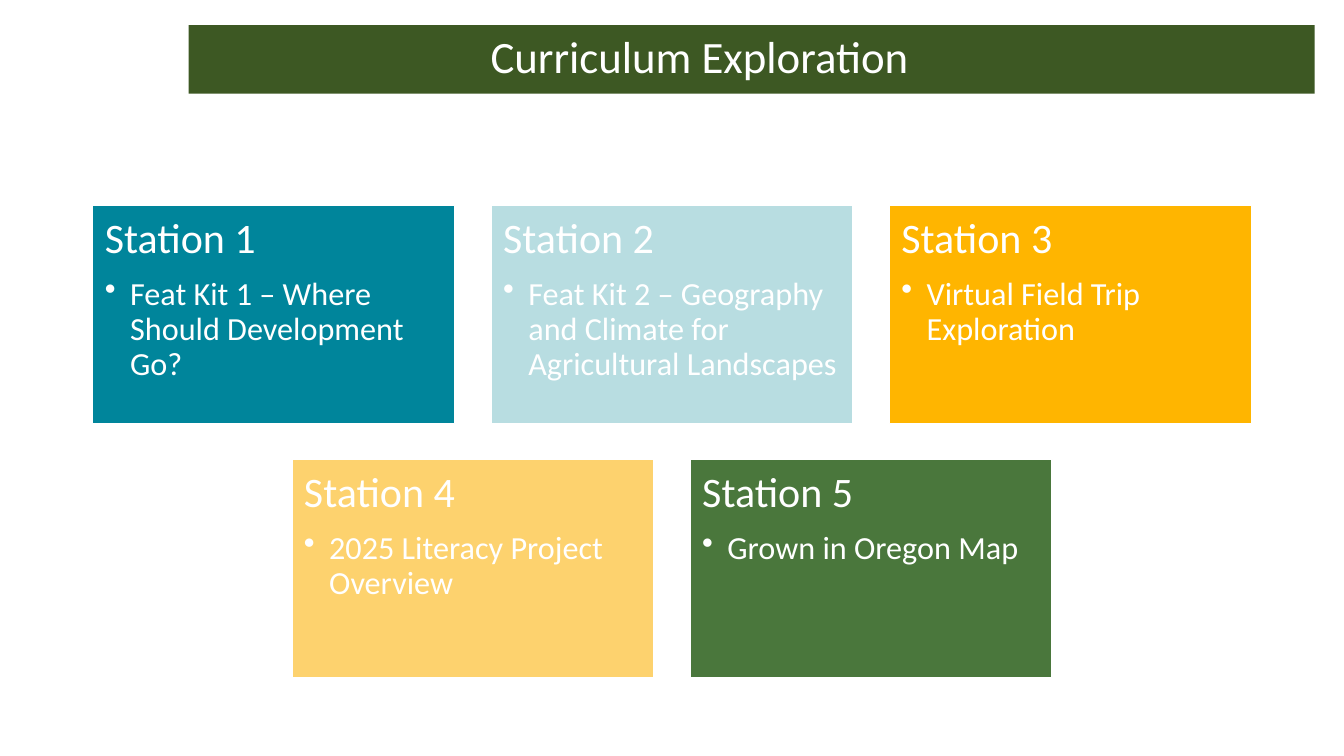
"""Build the Curriculum Exploration slide with its five station cards."""
import pptx
import pptx.dml.color
import pptx.enum.shapes
import pptx.enum.text
import pptx.oxml
import pptx.oxml.ns
import pptx.util
from pptx.util import Inches

FONT = "Calibri"
WHITE = "FFFFFF"
CARD_WIDTH, CARD_HEIGHT, CARD_GAP = 3.59, 2.16, 0.36
CARDS_CENTER, CARDS_TOP = 6.665, 2.04
STATION_ROWS = [
    [
        ("Station 1", "Feat Kit 1 – Where Should Development Go?", "00859B"),
        ("Station 2", "Feat Kit 2 – Geography and Climate for Agricultural Landscapes", "B8DDE1"),
        ("Station 3", "Virtual Field Trip Exploration", "FFB500"),
    ],
    [
        ("Station 4", "2025 Literacy Project Overview", "FDD26E"),
        ("Station 5", "Grown in Oregon Map", "4A773C"),
    ],
]


def color(value):
    """Turn a hex string into a colour."""
    return pptx.dml.color.RGBColor.from_string(value)


def format_paragraph(paragraph, size, alignment, space_after=0):
    """Set spacing, alignment and the white font of a paragraph."""
    paragraph.alignment = alignment
    paragraph.line_spacing = 0.9
    paragraph.space_before = pptx.util.Pt(0)
    paragraph.space_after = pptx.util.Pt(space_after)
    for run in paragraph.runs:
        run.font.name = FONT
        run.font.size = pptx.util.Pt(size)
        run.font.color.rgb = color(WHITE)


def add_bullet(paragraph):
    """Give a paragraph a hanging round bullet."""
    properties = paragraph._p.get_or_add_pPr()
    properties.set("marL", str(Inches(0.25)))
    properties.set("indent", str(Inches(-0.25)))
    bullet = pptx.oxml.parse_xml(f'<a:buChar {pptx.oxml.ns.nsdecls("a")} char="•"/>')
    properties.append(bullet)


def add_rectangle(slide, left, top, width, height, fill):
    """Add a filled rectangle without a line or shadow."""
    shape = slide.shapes.add_shape(
        pptx.enum.shapes.MSO_SHAPE.RECTANGLE,
        Inches(left), Inches(top), Inches(width), Inches(height),
    )
    shape.shadow.inherit = False
    shape.fill.solid()
    shape.fill.fore_color.rgb = color(fill)
    shape.line.fill.background()
    return shape


def add_title(slide, text):
    """Place the title on its green bar."""
    bar = add_rectangle(slide, 1.87, 0.25, 11.17, 0.68, "3D5823")
    title = slide.shapes.title
    title.element.addprevious(bar.element)
    title.left, title.top = Inches(3.94), Inches(0.29)
    title.width, title.height = Inches(6), Inches(0.64)
    frame = title.text_frame
    frame.text = text
    frame.auto_size = pptx.enum.text.MSO_AUTO_SIZE.NONE
    frame.vertical_anchor = pptx.enum.text.MSO_ANCHOR.TOP
    format_paragraph(frame.paragraphs[0], 32, pptx.enum.text.PP_ALIGN.CENTER)


def add_station(slide, left, top, name, activity, fill):
    """Add a station card with a heading and one bulleted activity."""
    card = add_rectangle(slide, left, top, CARD_WIDTH, CARD_HEIGHT, fill)
    card.line.color.rgb = color(WHITE)
    card.line.width = pptx.util.Pt(1)
    frame = card.text_frame
    frame.word_wrap = True
    frame.vertical_anchor = pptx.enum.text.MSO_ANCHOR.TOP
    frame.margin_left = frame.margin_right = Inches(0.12)
    frame.margin_top = frame.margin_bottom = Inches(0.12)
    heading = frame.paragraphs[0]
    heading.text = name
    format_paragraph(heading, 30, pptx.enum.text.PP_ALIGN.LEFT, 10.5)
    detail = frame.add_paragraph()
    detail.text = activity
    detail.level = 1
    add_bullet(detail)
    format_paragraph(detail, 23, pptx.enum.text.PP_ALIGN.LEFT, 3.5)


def add_stations(slide):
    """Lay out the station cards in centred rows."""
    pitch = CARD_WIDTH + CARD_GAP
    for row, stations in enumerate(STATION_ROWS):
        left = CARDS_CENTER - (len(stations) * pitch - CARD_GAP) / 2
        top = CARDS_TOP + row * (CARD_HEIGHT + CARD_GAP)
        for column, station in enumerate(stations):
            add_station(slide, left + column * pitch, top, *station)


def main():
    """Build and save the presentation."""
    presentation = pptx.Presentation()
    presentation.slide_width = Inches(13.33)
    presentation.slide_height = Inches(7.5)
    slide = presentation.slides.add_slide(presentation.slide_layouts[5])
    add_title(slide, "Curriculum Exploration")
    add_stations(slide)
    presentation.save("out.pptx")


if __name__ == "__main__":
    main()
